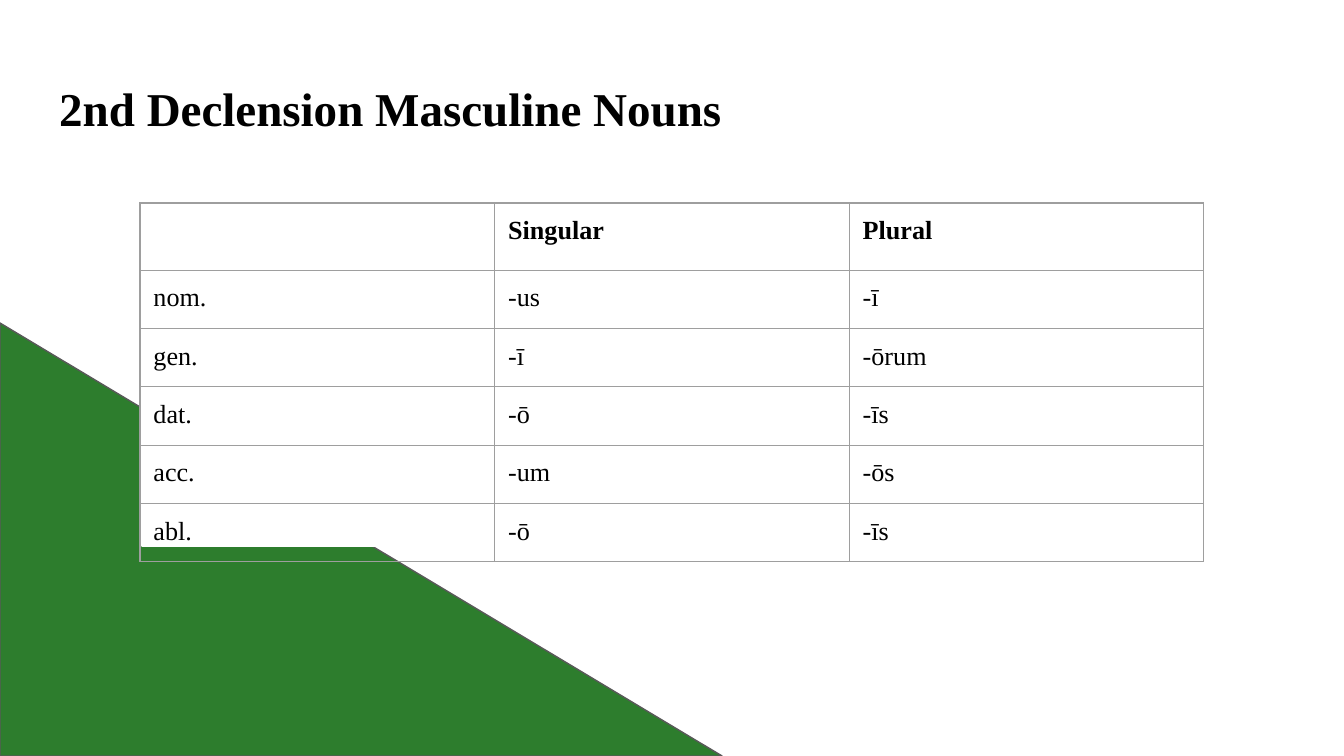
"""Build a slide with the endings of second declension masculine nouns."""
import pptx
import pptx.util
import pptx.dml.color
import pptx.enum.shapes
import pptx.enum.text
import pptx.oxml
import pptx.oxml.ns

TITLE = "2nd Declension Masculine Nouns"
ENDINGS = [
    ("", "Singular", "Plural"),
    ("nom.", "-us", "-ī"),
    ("gen.", "-ī", "-ōrum"),
    ("dat.", "-ō", "-īs"),
    ("acc.", "-um", "-ōs"),
    ("abl.", "-ō", "-īs"),
]

RGB = pptx.dml.color.RGBColor
BLACK = RGB(0x00, 0x00, 0x00)
WHITE = RGB(0xFF, 0xFF, 0xFF)
GREEN = RGB(0x2D, 0x7D, 0x2D)
DARK_GRAY = RGB(0x59, 0x59, 0x59)
BORDER_GRAY = RGB(0x9E, 0x9E, 0x9E)
FONT = "Times New Roman"
LINE_WIDTH = pptx.util.Pt(0.75)

SLIDE_W, SLIDE_H = 1344, 756
TABLE_X, TABLE_Y, TABLE_W = 140, 203, 1064
HEADER_H, ROW_H = 64, 56
INSET = pptx.util.Inches(0.1)


def px(n):
    return pptx.util.Emu(round(n * 914400 / 134.4))


def write(tf, text, size=14, bold=False, color=BLACK):
    p = tf.paragraphs[0]
    r = p.add_run()
    r.text = text
    r.font.name = FONT
    r.font.size = pptx.util.Pt(size)
    r.font.bold = bold
    r.font.color.rgb = color


def set_insets(box):
    box.margin_left = box.margin_right = INSET
    box.margin_top = box.margin_bottom = INSET


def add_panel(slide, kind, x, y, w, h, fill, line):
    s = slide.shapes.add_shape(kind, px(x), px(y), px(w), px(h))
    s.shadow.inherit = False
    s.fill.solid()
    s.fill.fore_color.rgb = fill
    s.line.color.rgb = line
    s.line.width = LINE_WIDTH


def set_borders(cell):
    tc_pr = cell._tc.get_or_add_tcPr()
    for i, side in enumerate(("lnL", "lnR", "lnT", "lnB")):
        tc_pr.insert(i, pptx.oxml.parse_xml(
            f'<a:{side} {pptx.oxml.ns.nsdecls("a")} w="{LINE_WIDTH}">'
            f'<a:solidFill><a:srgbClr val="{BORDER_GRAY}"/></a:solidFill>'
            f'</a:{side}>'))


def add_endings(slide):
    height = HEADER_H + ROW_H * (len(ENDINGS) - 1)
    table = slide.shapes.add_table(
        len(ENDINGS), len(ENDINGS[0]),
        px(TABLE_X), px(TABLE_Y), px(TABLE_W), px(height)).table
    table.first_row = table.horz_banding = False
    for column in table.columns:
        column.width = px(TABLE_W / len(ENDINGS[0]))
    for i, texts in enumerate(ENDINGS):
        table.rows[i].height = px(ROW_H if i else HEADER_H)
        for j, text in enumerate(texts):
            cell = table.cell(i, j)
            set_insets(cell)
            cell.fill.background()
            set_borders(cell)
            if text:
                write(cell.text_frame, text, bold=i == 0)


def main():
    prs = pptx.Presentation()
    prs.slide_width, prs.slide_height = px(SLIDE_W), px(SLIDE_H)
    slide = prs.slides.add_slide(prs.slide_layouts[6])
    shapes = pptx.enum.shapes.MSO_SHAPE

    add_panel(slide, shapes.RIGHT_TRIANGLE, 0, 323, 722, 433, GREEN, DARK_GRAY)
    add_panel(slide, shapes.RECTANGLE, 142, TABLE_Y, TABLE_W, 343, WHITE, WHITE)

    tf = slide.shapes.add_textbox(px(46), px(66), px(1252), px(85)).text_frame
    tf.word_wrap = True
    tf.vertical_anchor = pptx.enum.text.MSO_ANCHOR.TOP
    set_insets(tf)
    write(tf, TITLE, size=25.2, bold=True)

    add_endings(slide)
    prs.save("out.pptx")


if __name__ == "__main__":
    main()
